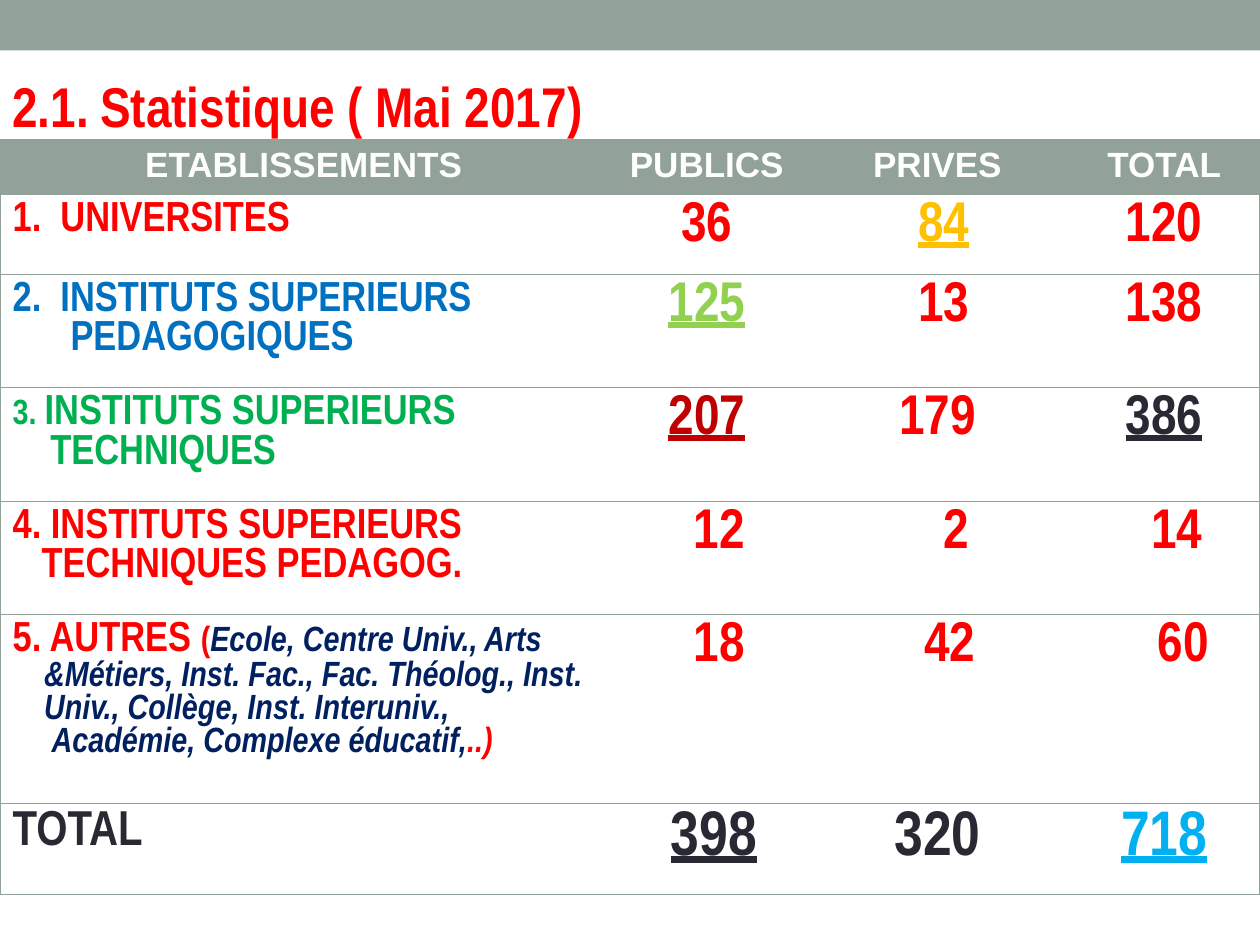
from pptx import Presentation
from pptx.dml.color import RGBColor
from pptx.enum.shapes import MSO_SHAPE
from pptx.enum.text import PP_ALIGN
from pptx.oxml.ns import qn
from pptx.util import Inches, Pt
from lxml.etree import Element, SubElement

COLORS = {
    "sage": "93A299", "white": "FFFFFF", "red": "FF0000", "amber": "FFC000",
    "blue": "0070C0", "lime": "92D050", "green": "00B050", "crimson": "C00000",
    "dark": "292934", "navy": "002060", "sky": "00B0F0",
}
NARROW = "Arial Narrow"
COLUMN_WIDTHS = [4.82, 1.58, 2.08, 1.52]
ROW_HEIGHTS = [0.43, 0.63, 0.9, 0.9, 0.9, 1.5, 0.72]
HEADERS = ["ETABLISSEMENTS", "PUBLICS", "PRIVES", "TOTAL"]

# Label lines: (left indent, list number or None, [(text, size, color, italic)])
LABELS = [
    [(0.38, 1, [("UNIVERSITES", 24, "red", False)])],
    [(0.38, 2, [("INSTITUTS SUPERIEURS", 24, "blue", False)]),
     (0.46, None, [("PEDAGOGIQUES", 24, "blue", False)])],
    [(0, None, [("3. ", 20, "green", False),
                ("INSTITUTS SUPERIEURS", 24, "green", False)]),
     (0.3, None, [("TECHNIQUES", 24, "green", False)])],
    [(0, None, [("4. INSTITUTS SUPERIEURS", 24, "red", False)]),
     (0.23, None, [("TECHNIQUES PEDAGOG.", 24, "red", False)])],
    [(0, None, [("5. AUTRES ", 24, "red", False), ("(", 20, "red", False),
                ("Ecole, Centre Univ., Arts", 20, "navy", True)]),
     (0.25, None, [("&Métiers, Inst. Fac., Fac. Théolog., Inst.", 20, "navy", True)]),
     (0.25, None, [("Univ., Collège, Inst. Interuniv.,", 20, "navy", True)]),
     (0.31, None, [("Académie, Complexe éducatif,", 20, "navy", True),
                   ("..)", 20, "red", True)])],
    [(0, None, [("TOTAL", 28, "dark", False)])],
]
# Figures: (text, color, underlined, left indent)
FIGURES = [
    [("36", "red", False, 0), ("84", "amber", True, 0.1), ("120", "red", False, 0)],
    [("125", "lime", True, 0), ("13", "red", False, 0.1), ("138", "red", False, 0)],
    [("207", "crimson", True, 0), ("179", "red", False, 0), ("386", "dark", True, 0)],
    [("12", "red", False, 0.2), ("2", "red", False, 0.3), ("14", "red", False, 0.2)],
    [("18", "red", False, 0.2), ("42", "red", False, 0.2), ("60", "red", False, 0.3)],
    [("398", "dark", True, 0.11), ("320", "dark", False, 0), ("718", "sky", True, 0)],
]


def rgb(name):
    return RGBColor.from_string(COLORS[name])


def add_span(para, text, size, color, font=NARROW, italic=False, underline=False):
    span = para.add_run()
    span.text = text
    span.font.name = font
    span.font.size = Pt(size)
    span.font.bold = True
    span.font.italic = italic
    span.font.underline = underline
    span.font.color.rgb = rgb(color)


def indent(para, left, number=None):
    """Set the left margin, with a hanging automatic number if one is given."""
    properties = para._p.get_or_add_pPr()
    properties.set("marL", str(Inches(left)))
    properties.set("indent", str(-Inches(left) if number else 0))
    if number:
        bullet = SubElement(properties, qn("a:buAutoNum"), type="arabicPeriod")
        bullet.set("startAt", str(number))


def set_borders(cell, visible):
    """Draw the named sides of the cell and hide the others."""
    properties = cell._tc.get_or_add_tcPr()
    for position, side in enumerate("LRTB"):
        line = Element(qn(f"a:ln{side}"), w=str(Pt(0.75)))
        if side in visible:
            fill = SubElement(line, qn("a:solidFill"))
            SubElement(fill, qn("a:srgbClr"), val=COLORS["sage"])
        else:
            SubElement(line, qn("a:noFill"))
        properties.insert(position, line)


def add_band(page, left, top, width, height):
    band = page.shapes.add_shape(MSO_SHAPE.RECTANGLE, left, top, width, height)
    band.shadow.inherit = False
    band.fill.solid()
    band.fill.fore_color.rgb = rgb("sage")
    band.line.fill.background()


def add_title(page, left, top, width, height):
    box = page.shapes.add_textbox(left, top, width, height)
    box.text_frame.word_wrap = True
    para = box.text_frame.paragraphs[0]
    para.space_before = Pt(7)
    for text, size in [("2.1.", 32), (" ", 28), ("Statistique ( Mai 2017)", 32)]:
        add_span(para, text, size, "red")


def fill_label(cell, lines):
    frame = cell.text_frame
    for position, (left, number, spans) in enumerate(lines):
        para = frame.add_paragraph() if position else frame.paragraphs[0]
        indent(para, left, number)
        for text, size, color, italic in spans:
            add_span(para, text, size, color, italic=italic)


def fill_figure(cell, figure, size):
    text, color, underline, left = figure
    para = cell.text_frame.paragraphs[0]
    para.alignment = PP_ALIGN.CENTER
    indent(para, left)
    add_span(para, text, size, color, underline=underline)


def add_statistics(page, left, top, width, height):
    rows, columns = len(ROW_HEIGHTS), len(COLUMN_WIDTHS)
    table = page.shapes.add_table(rows, columns, left, top, width, height).table
    table.horz_banding = False
    for column, share in zip(table.columns, COLUMN_WIDTHS):
        column.width = int(width * share / sum(COLUMN_WIDTHS))
    for row, share in zip(table.rows, ROW_HEIGHTS):
        row.height = int(height * share / sum(ROW_HEIGHTS))

    for r in range(rows):
        for c in range(columns):
            cell = table.cell(r, c)
            if r == 0:
                cell.fill.solid()
                cell.fill.fore_color.rgb = rgb("sage")
                para = cell.text_frame.paragraphs[0]
                para.alignment = PP_ALIGN.CENTER
                add_span(para, HEADERS[c], 20, "white", font="Arial")
            else:
                cell.fill.background()
                if c == 0:
                    fill_label(cell, LABELS[r - 1])
                else:
                    fill_figure(cell, FIGURES[r - 1][c - 1], 36 if r == rows - 1 else 32)
            outer = {0: "L", columns - 1: "R"}.get(c, "")
            set_borders(cell, "TB" + outer)


def main():
    deck = Presentation()
    deck.slide_width, deck.slide_height = Inches(10), Inches(7.5)
    page = deck.slides.add_slide(deck.slide_layouts[6])
    add_band(page, 0, 0, deck.slide_width, Inches(0.4))
    add_title(page, 0, Inches(0.52), deck.slide_width, Inches(0.6))
    add_statistics(page, 0, Inches(1.11), deck.slide_width, Inches(sum(ROW_HEIGHTS)))
    deck.save("out.pptx")


if __name__ == "__main__":
    main()
